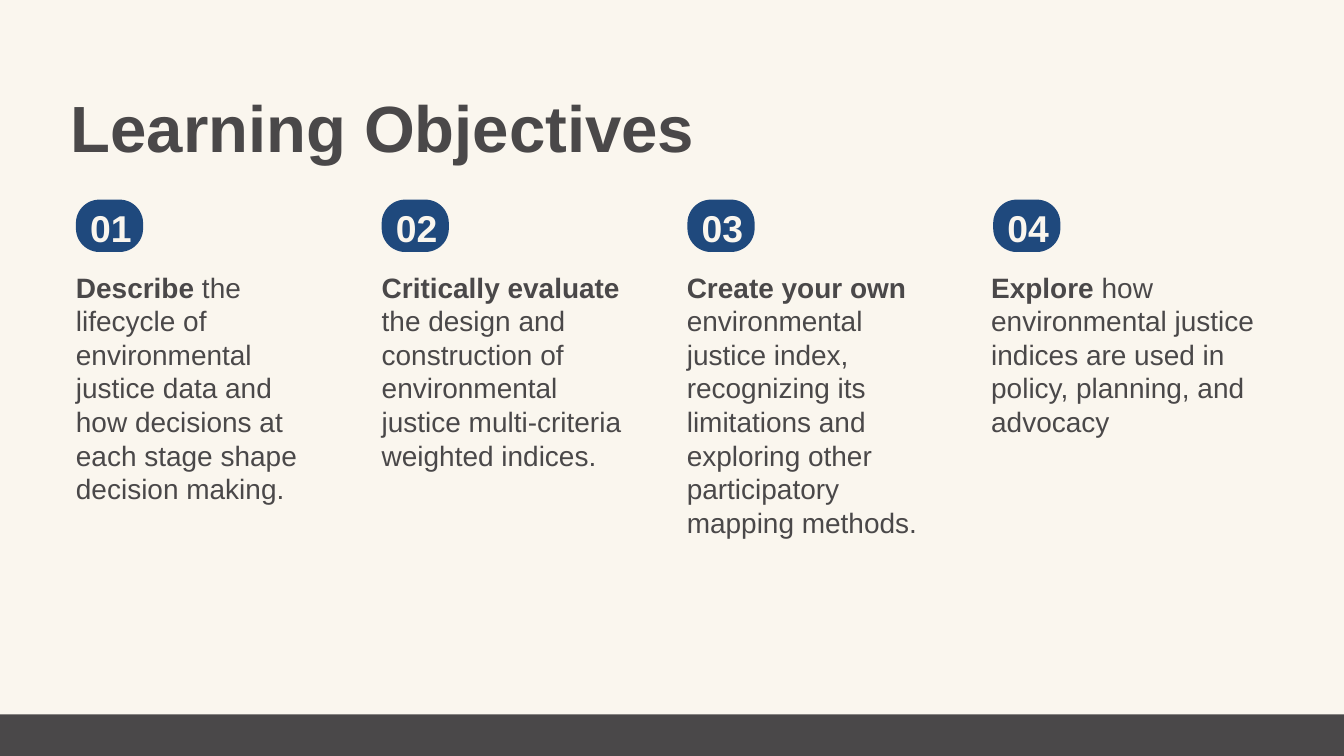
from pptx import Presentation
from pptx.dml.color import RGBColor
from pptx.enum.shapes import MSO_SHAPE
from pptx.enum.text import MSO_AUTO_SIZE
from pptx.util import Inches, Pt

CREAM = RGBColor(0xFA, 0xF6, 0xEE)
CHARCOAL = RGBColor(0x4A, 0x48, 0x49)
NAVY = RGBColor(0x1F, 0x49, 0x7D)
ROUNDED = MSO_SHAPE.ROUNDED_RECTANGLE
RECTANGLE = MSO_SHAPE.RECTANGLE

FIRST_LEFT = 1.13
COLUMN_STEP = 4.55

# bold opening, remaining text, text left, text width, text height
OBJECTIVES = [
    ("Describe ", "the lifecycle of environmental justice data and how decisions "
     "at each stage shape decision making.", 1.13, 3.39, 3.53),
    ("Critically evaluate ", "the design and construction of environmental justice "
     "multi-criteria weighted indices.", 5.68, 3.65, 3.03),
    ("Create your own ", "environmental justice index, recognizing its limitations "
     "and exploring other participatory mapping methods.", 10.22, 3.91, 4.04),
    ("Explore", " how environmental justice indices are used in policy, planning, "
     "and advocacy", 14.75, 4.13, 2.52),
]


def add_text(bounds, spans, size, line_pitch, color=CHARCOAL):
    """Add an unpadded text box; spans are (text, bold) pairs, size and pitch in points."""
    box = page.shapes.add_textbox(*map(Inches, bounds))
    frame_format = {"word_wrap": True, "auto_size": MSO_AUTO_SIZE.SHAPE_TO_FIT_TEXT,
                    "margin_left": 0, "margin_top": 0,
                    "margin_right": 0, "margin_bottom": 0}
    for name, value in frame_format.items():
        setattr(box.text_frame, name, value)
    para = box.text_frame.paragraphs[0]
    para.line_spacing = Pt(line_pitch)
    for text, bold in spans:
        span = para.add_run()
        span.text = text
        for name, value in {"name": "Arial", "size": Pt(size), "bold": bold}.items():
            setattr(span.font, name, value)
        span.font.color.rgb = color


def add_block(kind, bounds, color):
    block = page.shapes.add_shape(kind, *map(Inches, bounds))
    block.shadow.inherit = False
    block.fill.solid()
    block.fill.fore_color.rgb = color
    block.line.fill.background()
    return block


deck = Presentation()
deck.slide_width = Inches(20)
deck.slide_height = Inches(11.25)
page = deck.slides.add_slide(deck.slide_layouts[6])
page.background.fill.solid()
page.background.fill.fore_color.rgb = CREAM

add_text((1.05, 1.24, 17.82, 1.18), [("Learning Objectives", True)], 70, 88)
add_block(RECTANGLE, (-0.38, 10.63, 21.74, 0.62), CHARCOAL)

for index, (opening, rest, left, width, height) in enumerate(OBJECTIVES):
    badge_left = FIRST_LEFT + index * COLUMN_STEP
    badge = add_block(ROUNDED, (badge_left, 2.97, 1, 0.78), NAVY)
    badge.adjustments[0] = 0.45
    add_text((badge_left + 0.21, 3.02, 3.39, 0.67), [(f"{index + 1:02}", True)],
             40, 50, CREAM)
    add_text((left, 4.02, width, height), [(opening, True), (rest, False)], 30, 36)

deck.save("out.pptx")
